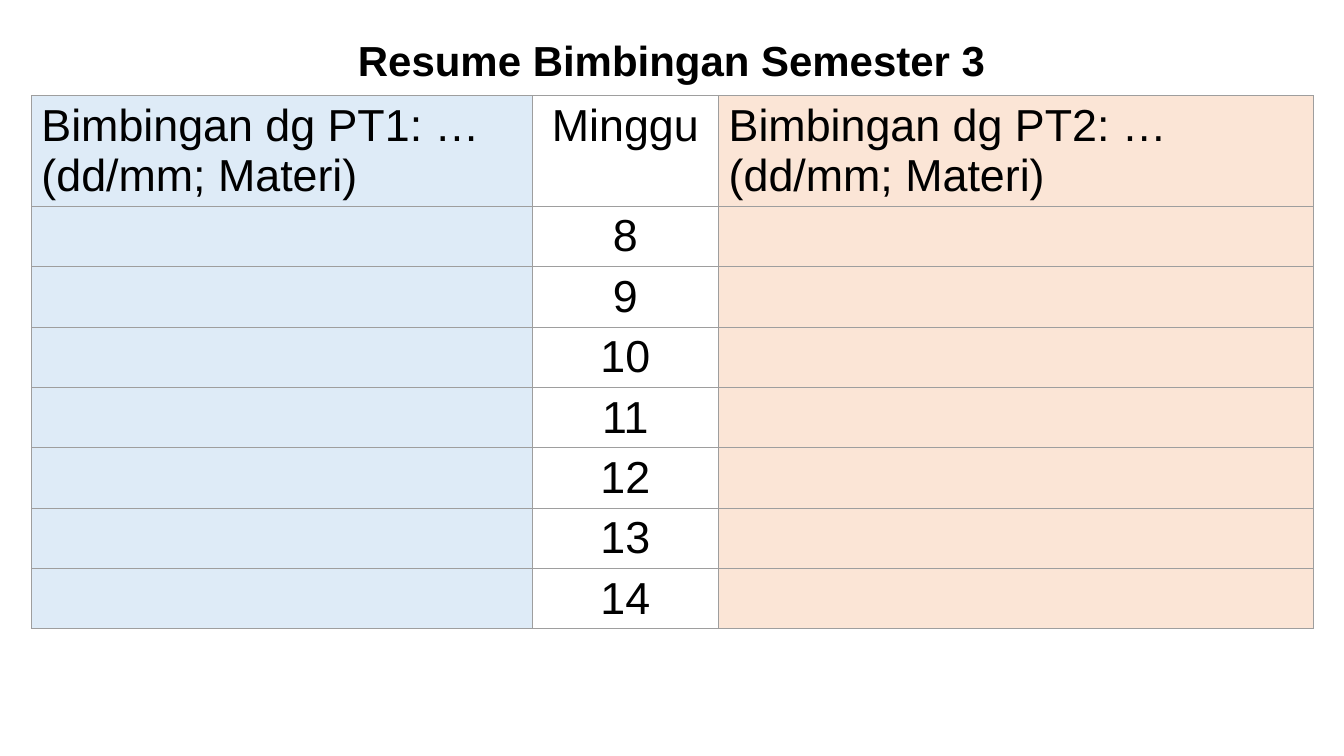
from dataclasses import dataclass

from lxml import etree
from pptx import Presentation
from pptx.dml.color import RGBColor
from pptx.enum.text import MSO_ANCHOR, PP_ALIGN
from pptx.oxml.ns import qn
from pptx.util import Cm, Pt

LEFT, CENTER = PP_ALIGN.LEFT, PP_ALIGN.CENTER
MIDDLE = MSO_ANCHOR.MIDDLE


@dataclass(frozen=True)
class Theme:
    font: str = "Arial"
    ink: str = "000000"
    blue: str = "DEEBF7"
    peach: str = "FBE5D6"
    rule: str = "9E9E9E"
    title: int = 30
    body: int = 32
    line: float = 0.75


THEME = Theme()
WIDTHS = (12.62, 4.7, 14.99)
FILLS = (THEME.blue, None, THEME.peach)
ALIGNS = (LEFT, CENTER, LEFT)
HEAD = (
    "Bimbingan dg PT1: …\n(dd/mm; Materi)",
    "Minggu",
    "Bimbingan dg PT2: …\n(dd/mm; Materi)",
)
WEEKS = range(8, 15)
HEAD_TALL, ROW_TALL = 2.77, 1.52


def style_text(frame, size, align, bold=False):
    for para in frame.paragraphs:
        para.alignment = align
        for font in [para.font] + [run.font for run in para.runs]:
            font.name = THEME.font
            font.size = Pt(size)
            font.bold = bold
            font.color.rgb = RGBColor.from_string(THEME.ink)


def set_title(slide, text):
    title = slide.shapes.title
    title.left, title.top = Cm(6.91), Cm(0.81)
    title.width, title.height = Cm(20.04), Cm(1.57)
    frame = title.text_frame
    frame.text = text
    frame.word_wrap = True
    frame.vertical_anchor = MIDDLE
    style_text(frame, THEME.title, CENTER, bold=True)
    frame.paragraphs[0].line_spacing = 0.9


def add_borders(cell):
    props = cell._tc.get_or_add_tcPr()
    for spot, side in enumerate(("lnL", "lnR", "lnT", "lnB")):
        line = etree.Element(qn(f"a:{side}"), w=str(Pt(THEME.line)))
        fill = etree.SubElement(line, qn("a:solidFill"))
        etree.SubElement(fill, qn("a:srgbClr"), val=THEME.rule)
        props.insert(spot, line)


def fill_cell(cell, text, color, align):
    cell.text_frame.text = text
    style_text(cell.text_frame, THEME.body, align)
    if color:
        cell.fill.solid()
        cell.fill.fore_color.rgb = RGBColor.from_string(color)
    else:
        cell.fill.background()
    add_borders(cell)


def add_grid(slide, rows):
    talls = [HEAD_TALL] + [ROW_TALL] * (len(rows) - 1)
    frame = slide.shapes.add_table(
        len(rows), len(WIDTHS), Cm(0.79), Cm(2.41), Cm(sum(WIDTHS)), Cm(sum(talls))
    )
    table = frame.table
    table.first_row = False
    table.horz_banding = False
    for col, width in zip(table.columns, WIDTHS):
        col.width = Cm(width)
    for row, tall, texts in zip(table.rows, talls, rows):
        row.height = Cm(tall)
        for cell, text, color, align in zip(row.cells, texts, FILLS, ALIGNS):
            fill_cell(cell, text, color, align)


def main():
    deck = Presentation()
    deck.slide_width, deck.slide_height = Cm(33.87), Cm(19.05)
    slide = deck.slides.add_slide(deck.slide_layouts[5])
    set_title(slide, "Resume Bimbingan Semester 3")
    add_grid(slide, [HEAD] + [("", str(week), "") for week in WEEKS])
    deck.save("out.pptx")


if __name__ == "__main__":
    main()
